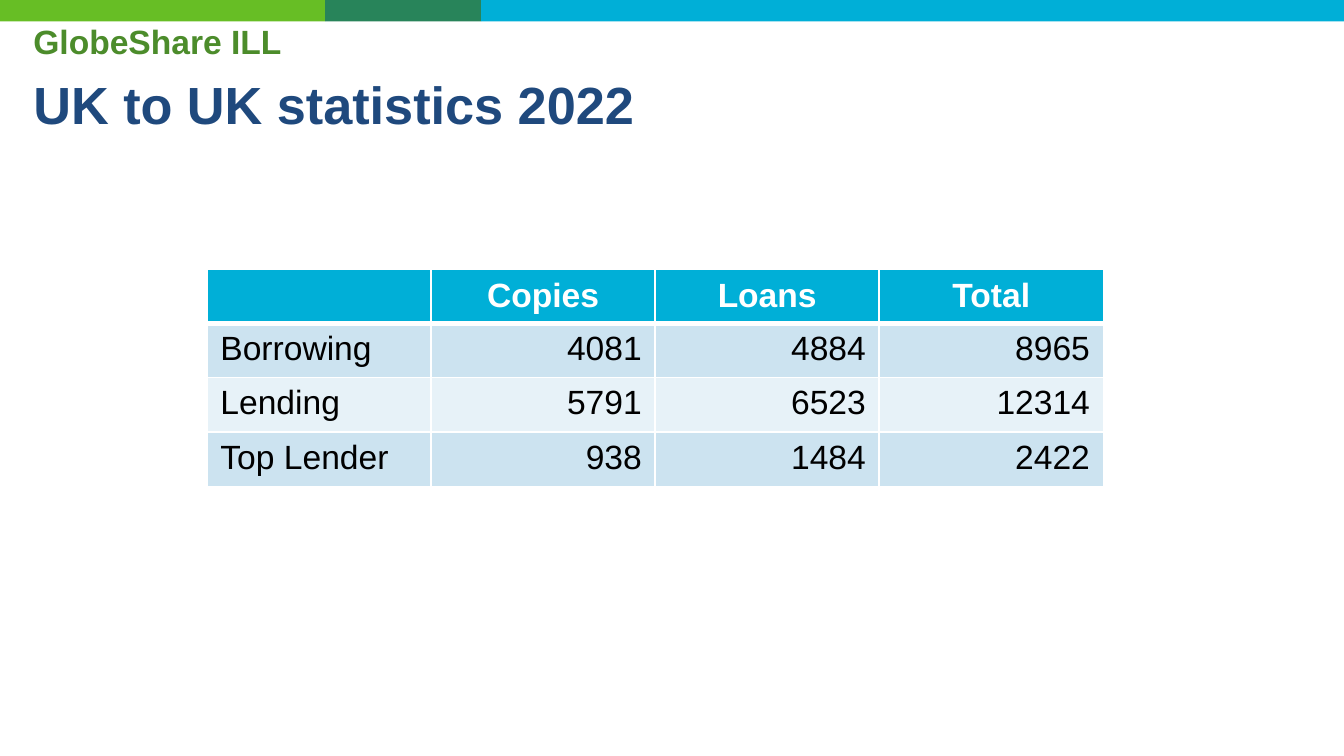
from lxml.etree import SubElement
from pptx import Presentation
from pptx.dml.color import RGBColor
from pptx.enum.shapes import MSO_SHAPE as Shape
from pptx.enum.text import MSO_ANCHOR as Anchor, PP_ALIGN as Align
from pptx.oxml import parse_xml
from pptx.oxml.ns import nsdecls, qn
from pptx.util import Inches, Pt

# Content
BANDS = [(2.42, "67BE25"), (1.16, "28845A"), (6.42, "00AFD7")]
HEADINGS = [  # text, size, colour, space before
    ("GlobeShare ILL", 18, "4C8C2B", 0),
    ("UK to UK statistics 2022", 28, "1F497D", 5.6),
]
ROWS = [
    ("", "Copies", "Loans", "Total"),
    ("Borrowing", "4081", "4884", "8965"),
    ("Lending", "5791", "6523", "12314"),
    ("Top Lender", "938", "1484", "2422"),
]
HEADER_FILL = "00AFD7"
STRIPES = ["CCE3F0", "E7F2F8"]


def color(value):
    return RGBColor.from_string(value)


def set_font(para, size, value, bold):
    font = para.font
    font.name, font.size, font.bold = "Arial", Pt(size), bold
    font.color.rgb = color(value)


def set_borders(cell, widths):
    """Draw white borders; they must stand before the fill."""
    properties = cell._tc.get_or_add_tcPr()
    for index, (side, width) in enumerate(widths.items()):
        line = parse_xml(f'<a:ln{side} {nsdecls("a")} w="{Pt(width)}"/>')
        fill = SubElement(line, qn("a:solidFill"))
        SubElement(fill, qn("a:srgbClr"), val="FFFFFF")
        properties.insert(index, line)


# Widescreen 16:9 page
deck = Presentation()
deck.slide_width = Inches(10)
deck.slide_height = deck.slide_width * 9 // 16
page = deck.slides.add_slide(deck.slide_layouts[6])

# Colour bands along the top
left = 0
for width, fill in BANDS:
    band = page.shapes.add_shape(
        Shape.RECTANGLE, Inches(left), 0, Inches(width), Inches(0.16))
    band.shadow.inherit = False
    band.fill.solid()
    band.fill.fore_color.rgb = color(fill)
    band.line.fill.background()
    left += width

# Headings
box = page.shapes.add_textbox(
    Inches(0.15), Inches(0.11), Inches(9.45), Inches(1.18))
frame = box.text_frame
frame.word_wrap = True
for index, (text, size, value, gap) in enumerate(HEADINGS):
    para = frame.add_paragraph() if index else frame.paragraphs[0]
    para.text = text
    if gap:
        para.space_before = Pt(gap)
    set_font(para, size, value, True)

# Statistics table
table = page.shapes.add_table(
    len(ROWS), len(ROWS[0]), Inches(1.54), Inches(2),
    Inches(6.67), Inches(1.62)).table
for r, row in enumerate(ROWS):
    header = r == 0
    for c, text in enumerate(row):
        cell = table.cell(r, c)
        cell.fill.solid()
        cell.fill.fore_color.rgb = color(
            HEADER_FILL if header else STRIPES[(r - 1) % 2])
        cell.vertical_anchor = Anchor.MIDDLE if header else Anchor.TOP
        set_borders(cell, {"L": 1, "R": 1, "T": 3 if r == 1 else 1,
                           "B": 3 if header else 1})
        para = cell.text_frame.paragraphs[0]
        para.text = text
        if header:
            para.alignment = Align.CENTER
        else:
            para.alignment = Align.RIGHT if c else Align.LEFT
        set_font(para, 18, "FFFFFF" if header else "000000", header)

deck.save("out.pptx")
